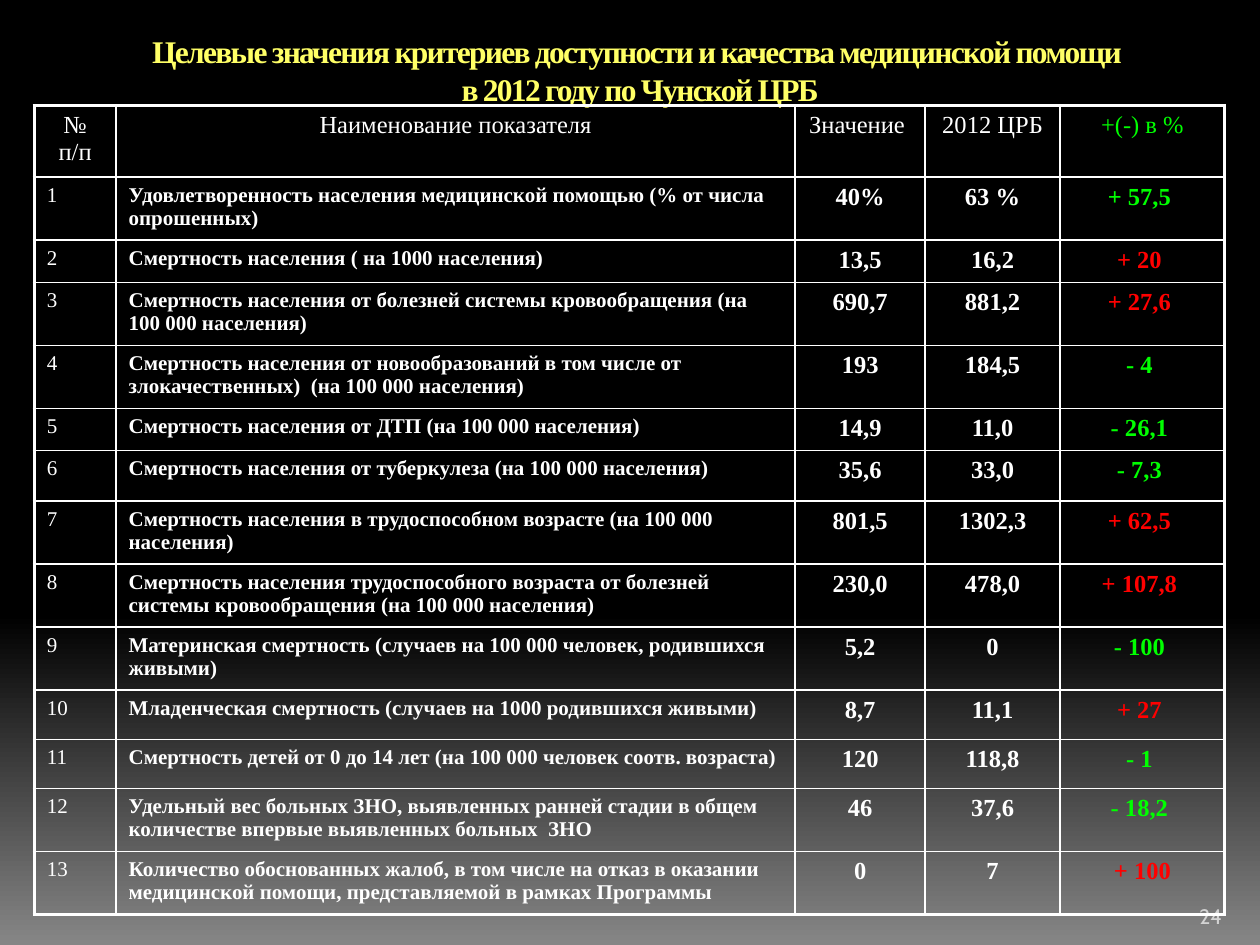
from copy import deepcopy
from dataclasses import dataclass

from lxml import etree
from pptx import Presentation
from pptx.dml.color import RGBColor
from pptx.enum.text import MSO_ANCHOR, PP_ALIGN
from pptx.oxml.ns import qn
from pptx.util import Cm, Pt

CENTER, LEFT = PP_ALIGN.CENTER, PP_ALIGN.LEFT
TOP, BOTTOM = MSO_ANCHOR.TOP, MSO_ANCHOR.BOTTOM
SERIF = "Times New Roman"
WHITE, GREEN, RED, YELLOW = "FFFFFF", "00FF00", "FF0000", "FFFF66"
THIN, THICK = 1, 2.25
COLUMN_WIDTHS = (1.65, 13.69, 2.62, 2.72, 3.32)
ONE_LINE, TWO_LINES, ROOMY, TALL = 0.79, 1.22, 0.99, 1.02


@dataclass
class TextStyle:
    size: float
    color: str = WHITE
    bold: bool = False
    align: PP_ALIGN = CENTER
    font: str = SERIF


@dataclass
class Indicator:
    name: str
    target: str
    actual: str
    change: str
    change_color: str
    height: float = TWO_LINES


HEADERS = ("№ п/п", "Наименование показателя", "Значение ", "2012 ЦРБ", "+(-) в %")
INDICATORS = (
    Indicator("Удовлетворенность населения медицинской помощью (% от числа опрошенных)",
              "40%", "63 %", "+ 57,5 ", GREEN),
    Indicator("Смертность населения ( на 1000 населения)",
              "13,5", "16,2", "+ 20 ", RED, ONE_LINE),
    Indicator("Смертность населения от болезней системы кровообращения (на 100 000 населения)",
              "690,7", "881,2", "+ 27,6 ", RED),
    Indicator("Смертность населения от новообразований в том числе от злокачественных)  "
              "(на 100 000 населения)", "193", "184,5", "- 4 ", GREEN),
    Indicator("Смертность населения от ДТП (на 100 000 населения)",
              "14,9", "11,0", "- 26,1 ", GREEN, ONE_LINE),
    Indicator("Смертность населения от туберкулеза (на 100 000 населения)",
              "35,6", "33,0", "- 7,3 ", GREEN, TALL),
    Indicator("Смертность населения в трудоспособном возрасте (на 100 000 населения)",
              "801,5", "1302,3", "+ 62,5 ", RED),
    Indicator("Смертность населения трудоспособного возраста от болезней системы "
              "кровообращения (на 100 000 населения)", "230,0", "478,0", "+ 107,8 ", RED),
    Indicator("Материнская смертность (случаев на 100 000 человек, родившихся живыми)",
              "5,2", "0", "- 100 ", GREEN),
    Indicator("Младенческая смертность (случаев на 1000 родившихся живыми)",
              "8,7", "11,1", "+ 27 ", RED, ROOMY),
    Indicator("Смертность детей от 0 до 14 лет (на 100 000 человек соотв. возраста)",
              "120", "118,8", "- 1 ", GREEN, ROOMY),
    Indicator("Удельный вес больных ЗНО, выявленных ранней стадии в общем количестве "
              "впервые выявленных больных  ЗНО", "46", "37,6", "- 18,2 ", GREEN),
    Indicator("Количество обоснованных жалоб, в том числе на отказ в оказании медицинской "
              "помощи, представляемой в рамках Программы", "0", "7", "+ 100", RED),
)


def rgb(color: str) -> RGBColor:
    return RGBColor.from_string(color)


def add_run(paragraph, text: str, style: TextStyle):
    paragraph.alignment = style.align
    run = paragraph.add_run()
    run.text = text
    run.font.name = style.font
    run.font.size = Pt(style.size)
    run.font.bold = style.bold
    run.font.color.rgb = rgb(style.color)
    return run


def paint_background(slide, stops: tuple) -> None:
    fill = slide.background.fill
    fill.gradient()
    fill.gradient_angle = 270
    stop_list = slide.element.find(".//" + qn("a:gsLst"))
    stop_list.append(deepcopy(stop_list[0]))
    for stop, (position, color) in zip(fill.gradient_stops, stops):
        stop.position = position
        stop.color.rgb = rgb(color)


def add_text_box(slide, box: tuple, lines: tuple, style: TextStyle,
                 anchor=TOP, spacing: int = 0) -> None:
    frame = slide.shapes.add_textbox(*map(Cm, box)).text_frame
    frame.word_wrap = True
    frame.vertical_anchor = anchor
    for index, line in enumerate(lines):
        paragraph = frame.add_paragraph() if index else frame.paragraphs[0]
        run = add_run(paragraph, line, style)
        if spacing:
            run.font._element.set("spc", str(spacing))


def set_borders(cell, widths: dict) -> None:
    properties = cell._tc.get_or_add_tcPr()
    for index, (side, width) in enumerate(widths.items()):
        line = etree.Element(qn(f"a:ln{side}"), w=str(Pt(width)))
        solid = etree.SubElement(line, qn("a:solidFill"))
        etree.SubElement(solid, qn("a:srgbClr"), val=WHITE)
        properties.insert(index, line)


def fill_cell(cell, text: str, style: TextStyle, hanging: bool = False) -> None:
    cell.fill.background()
    paragraph = cell.text_frame.paragraphs[0]
    add_run(paragraph, text, style)
    paragraph.space_before = Pt(0.2 * style.size)
    if hanging:
        properties = paragraph._p.get_or_add_pPr()
        properties.set("marL", str(Cm(1.48)))
        properties.set("indent", str(-Cm(1.48)))


def add_indicator_table(slide) -> None:
    row_count, column_count = len(INDICATORS) + 1, len(HEADERS)
    frame = slide.shapes.add_table(row_count, column_count,
                                   Cm(0.69), Cm(2.13), Cm(24), Cm(16.28))
    table = frame.table
    table.horz_banding = False
    for column, width in zip(table.columns, COLUMN_WIDTHS):
        column.width = Cm(width)
    heights = [ONE_LINE] + [indicator.height for indicator in INDICATORS]
    for row, height in zip(table.rows, heights):
        row.height = Cm(height)
    frame.height = Cm(16.28)

    # Header row
    for column, header in enumerate(HEADERS):
        color = GREEN if column == column_count - 1 else WHITE
        fill_cell(table.cell(0, column), header, TextStyle(14, color))

    # Indicator rows
    value_style = TextStyle(14, bold=True)
    for number, indicator in enumerate(INDICATORS, 1):
        fill_cell(table.cell(number, 0), str(number), TextStyle(12, align=LEFT), hanging=True)
        fill_cell(table.cell(number, 1), indicator.name, TextStyle(12, bold=True, align=LEFT))
        fill_cell(table.cell(number, 2), indicator.target, value_style)
        fill_cell(table.cell(number, 3), indicator.actual, value_style)
        fill_cell(table.cell(number, 4), indicator.change,
                  TextStyle(14, indicator.change_color, bold=True))

    # Thick outer frame, thin inner grid
    for row in range(row_count):
        for column in range(column_count):
            set_borders(table.cell(row, column), {
                "L": THICK if column == 0 else THIN,
                "R": THICK if column == column_count - 1 else THIN,
                "T": THICK if row == 0 else THIN,
                "B": THICK if row == row_count - 1 else THIN,
            })


def main() -> None:
    presentation = Presentation()
    presentation.slide_width, presentation.slide_height = Cm(25.4), Cm(19.05)
    slide = presentation.slides.add_slide(presentation.slide_layouts[6])
    paint_background(slide, ((0, "000000"), (0.65, "000000"), (1, "868686")))

    # Slide number
    add_text_box(slide, (23.93, 17.83, 1.27, 1.02), ("24",),
                 TextStyle(12, "D2D2D2", align=LEFT, font="Cabin"), BOTTOM)

    # Title
    add_text_box(slide, (2.11, 0.53, 21.59, 1.6),
                 ("Целевые значения критериев доступности и качества медицинской помощи ",
                  "в 2012 году по Чунской ЦРБ"),
                 TextStyle(18, YELLOW, bold=True), spacing=-100)

    add_indicator_table(slide)
    presentation.save("out.pptx")


if __name__ == "__main__":
    main()
